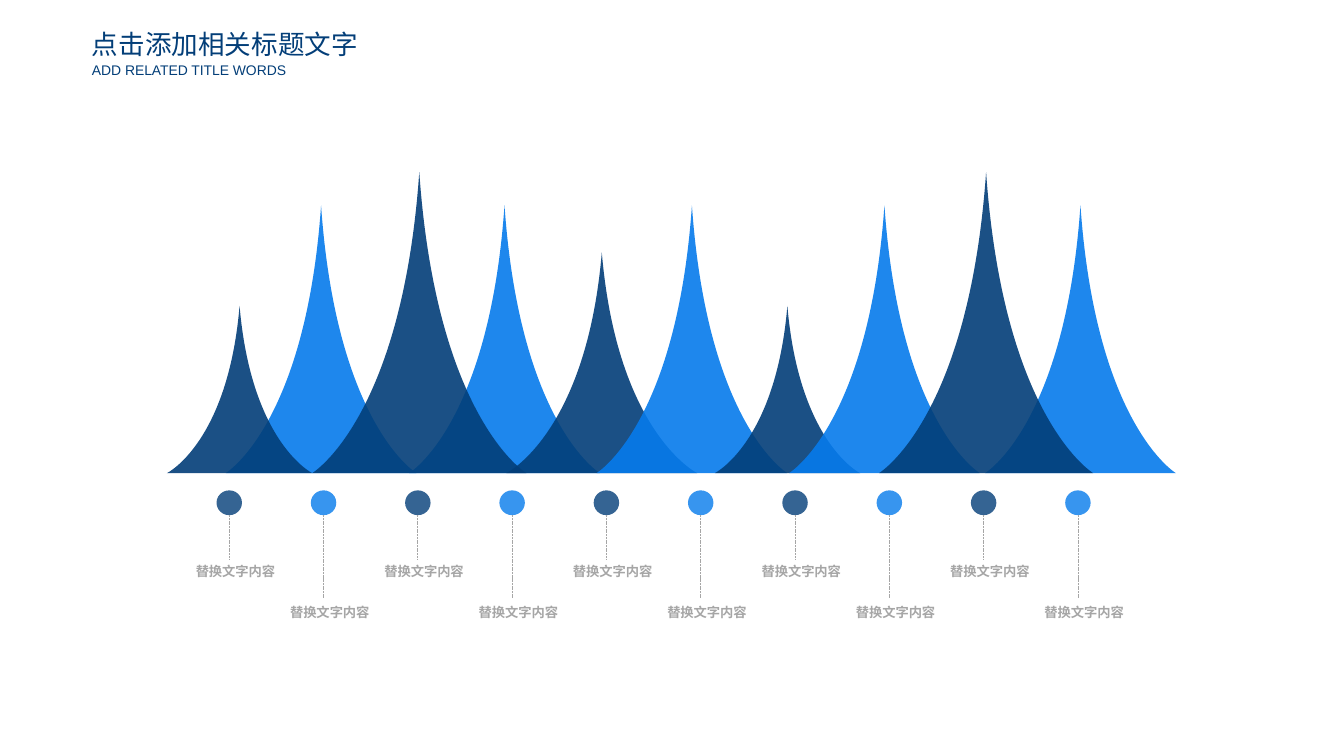
from lxml.etree import SubElement
from pptx import Presentation
from pptx.dml.color import RGBColor
from pptx.enum.dml import MSO_LINE
from pptx.enum.shapes import MSO_CONNECTOR, MSO_SHAPE
from pptx.enum.text import MSO_ANCHOR, MSO_AUTO_SIZE, PP_ALIGN
from pptx.oxml.ns import qn
from pptx.util import Pt

NAVY = RGBColor(0x03, 0x3E, 0x78)
BLUE = RGBColor(0x06, 0x7B, 0xEC)
GREY = RGBColor(0xA6, 0xA6, 0xA6)

FONT = "Arial"
BASELINE = 356.4
SMALL, MEDIUM, LARGE, TALL = (109.4, 126), (143.6, 166.3), (143.6, 201.6), (161.3, 226.8)
PEAKS = [
    (241.9, LARGE, BLUE),
    (380.1, LARGE, BLUE),
    (180.5, SMALL, NAVY),
    (315.9, TALL, NAVY),
    (453.4, MEDIUM, NAVY),
    (521.3, LARGE, BLUE),
    (593.2, SMALL, NAVY),
    (666.3, LARGE, BLUE),
    (814, LARGE, BLUE),
    (742.9, TALL, NAVY),
]

MARKER_COUNT = 10
MARKER_LEFT = 172.7
MARKER_GAP = 71.04
MARKER_TOP, MARKER_WIDTH, MARKER_HEIGHT = 369.4, 19.2, 18.7
LABEL_SHIFT, LABEL_WIDTH, LABEL_HEIGHT = 4.7, 60.5, 14.4


def paint(sp, color, opacity):
    sp.shadow.inherit = False
    sp.line.fill.background()
    sp.fill.solid()
    sp.fill.fore_color.rgb = color
    clr = sp.element.spPr.find(qn("a:solidFill")).find(qn("a:srgbClr"))
    SubElement(clr, qn("a:alpha")).set("val", str(opacity * 1000))


def bend(segment, controls):
    segment.tag = qn("a:cubicBezTo")
    end = segment[0]
    for x, y in controls:
        pt = SubElement(segment, qn("a:pt"))
        pt.set("x", str(x))
        pt.set("y", str(y))
    segment.append(end)


def add_peak(slide, center, size, color):
    width, height = size
    right = Pt(center + width / 2), Pt(BASELINE)
    apex = Pt(center), Pt(BASELINE - height)
    left = Pt(center - width / 2), Pt(BASELINE)
    builder = slide.shapes.build_freeform(*right)
    builder.add_line_segments([apex, left, right], close=True)
    sp = builder.convert_to_shape()
    w, h = sp.width, sp.height
    rise, descent = list(sp.element.iter(qn("a:lnTo")))[:2]
    bend(rise, [(w, h), (round(0.58 * w), round(0.82 * h))])
    bend(descent, [(round(0.42 * w), round(0.82 * h)), (0, h)])
    paint(sp, color, 90)


def add_dashed_line(shapes, x, top, bottom):
    line = shapes.add_connector(
        MSO_CONNECTOR.STRAIGHT, Pt(x), Pt(top), Pt(x), Pt(bottom))
    line.line.color.rgb = GREY
    line.line.width = Pt(0.5)
    line.line.dash_style = MSO_LINE.SQUARE_DOT
    SubElement(line.element.spPr, qn("a:effectLst"))


def write(sp, text, size, color, align=PP_ALIGN.LEFT, bold=False, spacing=1.0):
    tf = sp.text_frame
    tf.text = text
    tf.word_wrap = False
    tf.auto_size = MSO_AUTO_SIZE.NONE
    tf.vertical_anchor = MSO_ANCHOR.TOP
    tf.margin_left = tf.margin_right = tf.margin_top = tf.margin_bottom = 0
    p = tf.paragraphs[0]
    p.alignment = align
    p.line_spacing = spacing
    font = p.runs[0].font
    font.name = FONT
    font.size = Pt(size)
    font.bold = bold
    font.color.rgb = color


def add_text(shapes, left, top, width, height, *args):
    sp = shapes.add_textbox(Pt(left), Pt(top), Pt(width), Pt(height))
    write(sp, *args)


def add_marker(slide, x, color, line_bottom, label_top):
    shapes = slide.shapes.add_group_shape().shapes
    sp = shapes.add_shape(
        MSO_SHAPE.OVAL, Pt(x - MARKER_WIDTH / 2), Pt(MARKER_TOP),
        Pt(MARKER_WIDTH), Pt(MARKER_HEIGHT))
    paint(sp, color, 80)
    add_dashed_line(shapes, x, MARKER_TOP + MARKER_HEIGHT, line_bottom)
    add_text(shapes, x + LABEL_SHIFT - LABEL_WIDTH / 2, label_top, LABEL_WIDTH,
             LABEL_HEIGHT, "替换文字内容", 10, GREY, PP_ALIGN.CENTER, True, 1.2)


def add_title(slide):
    title = slide.shapes.title
    title.left, title.top = Pt(69.3), Pt(20.9)
    title.width, title.height = Pt(201.6), Pt(24.5)
    write(title, "点击添加相关标题文字", 20, NAVY)
    add_text(slide.shapes, 69.3, 46.1, 149.8, 13,
             "ADD RELATED TITLE WORDS", 10.5, NAVY)


def main():
    prs = Presentation()
    prs.slide_width, prs.slide_height = Pt(1012.5), Pt(569.5)
    slide = prs.slides.add_slide(prs.slide_layouts[5])
    add_title(slide)
    for center, size, color in PEAKS:
        add_peak(slide, center, size, color)
    for i in range(MARKER_COUNT):
        x = MARKER_LEFT + i * MARKER_GAP
        if i % 2 == 0:
            add_marker(slide, x, NAVY, 421.2, 421.9)
        else:
            add_marker(slide, x, BLUE, 450.7, 452.9)
    prs.save("out.pptx")


if __name__ == "__main__":
    main()
